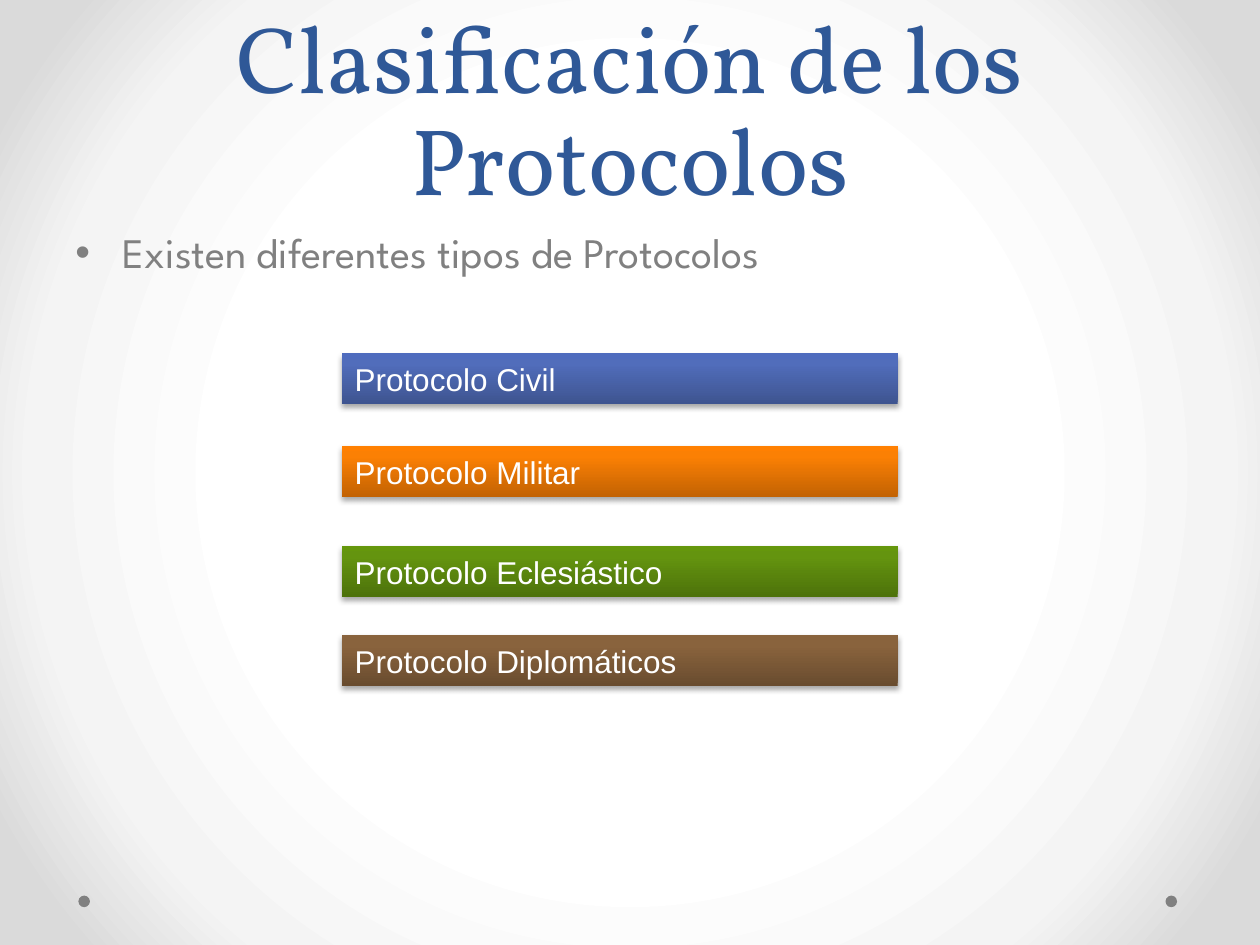
from lxml import etree
from pptx import Presentation
from pptx.dml.color import RGBColor
from pptx.enum.shapes import MSO_SHAPE
from pptx.enum.text import MSO_ANCHOR, PP_ALIGN
from pptx.oxml.ns import qn
from pptx.util import Pt

RECT, OVAL = MSO_SHAPE.RECTANGLE, MSO_SHAPE.OVAL
TOP, MID, LOW = MSO_ANCHOR.TOP, MSO_ANCHOR.MIDDLE, MSO_ANCHOR.BOTTOM
LEFT, MID_X = PP_ALIGN.LEFT, PP_ALIGN.CENTER

BLUE, GRAY, WHITE = "2F5897", "808080", "FFFFFF"
BACK = [(50, WHITE), (76, "F4F4F4"), (92, "DADADA")]
# text, top, colours from bottom to top
BARS = [
    ("Protocolo Civil", 202, ("3E5490", "516DBB", "4F6CBE")),
    ("Protocolo Militar", 255, ("C26203", "FB8004", "FF8002")),
    ("Protocolo Eclesiástico", 312, ("4D720B", "64940F", "65970C")),
    ("Protocolo Diplomáticos", 363, ("694C2F", "89633D", "8B633C")),
]


def color(code):
    return RGBColor.from_string(code)


def node(top, tag, **attrs):
    """Add an XML child with the given attributes."""
    child = etree.SubElement(top, qn(tag))
    for key, val in attrs.items():
        child.set(key, str(val))
    return child


def blend(host, stops, angle=None):
    """Turn the solid fill of host into a linear or, with no angle, round gradient."""
    old = host.find(qn("a:solidFill"))
    grad = etree.Element(qn("a:gradFill"), rotWithShape="1")
    items = node(grad, "a:gsLst")
    for pos, code in stops:
        stop = node(items, "a:gs", pos=pos * 1000)
        node(stop, "a:srgbClr", val=color(code))
    if angle is None:
        round_ = node(grad, "a:path", path="circle")
        node(round_, "a:fillToRect", l=50000, t=50000, r=50000, b=50000)
    else:
        node(grad, "a:lin", ang=angle * 60000, scaled=0)
    host.replace(old, grad)


def write(shape, text, font, size, code, align=LEFT, anchor=TOP, wrap=True):
    frame = shape.text_frame
    frame.word_wrap = wrap
    frame.vertical_anchor = anchor
    para = frame.paragraphs[0]
    para.alignment = align
    run = para.add_run()
    run.text = text
    run.font.name = font
    run.font.size = Pt(size)
    run.font.color.rgb = color(code)
    return para


def label(slide, box, text, font, size, code, **form):
    shape = slide.shapes.add_textbox(*map(Pt, box))
    return write(shape, text, font, size, code, **form)


def bullet(para, indent):
    props = para._p.get_or_add_pPr()
    props.set("marL", str(Pt(indent)))
    props.set("indent", str(Pt(-indent)))
    node(props, "a:buFont", typeface="Arial")
    node(props, "a:buChar", char="•")


def block(slide, kind, box, code):
    shape = slide.shapes.add_shape(kind, *map(Pt, box))
    shape.fill.solid()
    shape.fill.fore_color.rgb = color(code)
    shape.line.fill.background()
    shape.shadow.inherit = False
    return shape


def shade(shape):
    """Give the shape a soft shadow below it."""
    effects = shape._element.spPr.find(qn("a:effectLst"))
    drop = node(effects, "a:outerShdw", blurRad=Pt(3.1), dist=Pt(1.8),
                dir=90 * 60000, rotWithShape=0)
    black = node(drop, "a:srgbClr", val="000000")
    node(black, "a:alpha", val=35000)


def bar(slide, text, top, codes):
    shape = block(slide, RECT, (195.5, top, 317.5, 29), codes[0])
    blend(shape._element.spPr, zip((0, 80, 100), codes), angle=270)
    shade(shape)
    write(shape, text, "Arial", 18, WHITE, anchor=MID)


def main():
    deck = Presentation()
    deck.slide_width, deck.slide_height = Pt(720), Pt(540)
    slide = deck.slides.add_slide(deck.slide_layouts[6])

    fill = slide.background.fill
    fill.solid()
    fill.fore_color.rgb = color(WHITE)
    blend(slide._element.find(".//" + qn("p:bgPr")), BACK)

    for left in (666, 44.8):
        block(slide, OVAL, (left, 511.8, 6.6, 6.6), GRAY)

    title = label(slide, (36, 0, 648, 126), "Clasificación de los Protocolos",
                  "Vollkorn", 54, BLUE, align=MID_X, anchor=LOW)
    title.line_spacing = Pt(58)
    intro = label(slide, (36, 126, 648, 42), "Existen diferentes tipos de Protocolos",
                  "League Spartan", 24, GRAY)
    intro.space_before = Pt(4.8)
    bullet(intro, 27)

    for text, top, codes in BARS:
        bar(slide, text, top, codes)

    deck.save("out.pptx")


if __name__ == "__main__":
    main()
